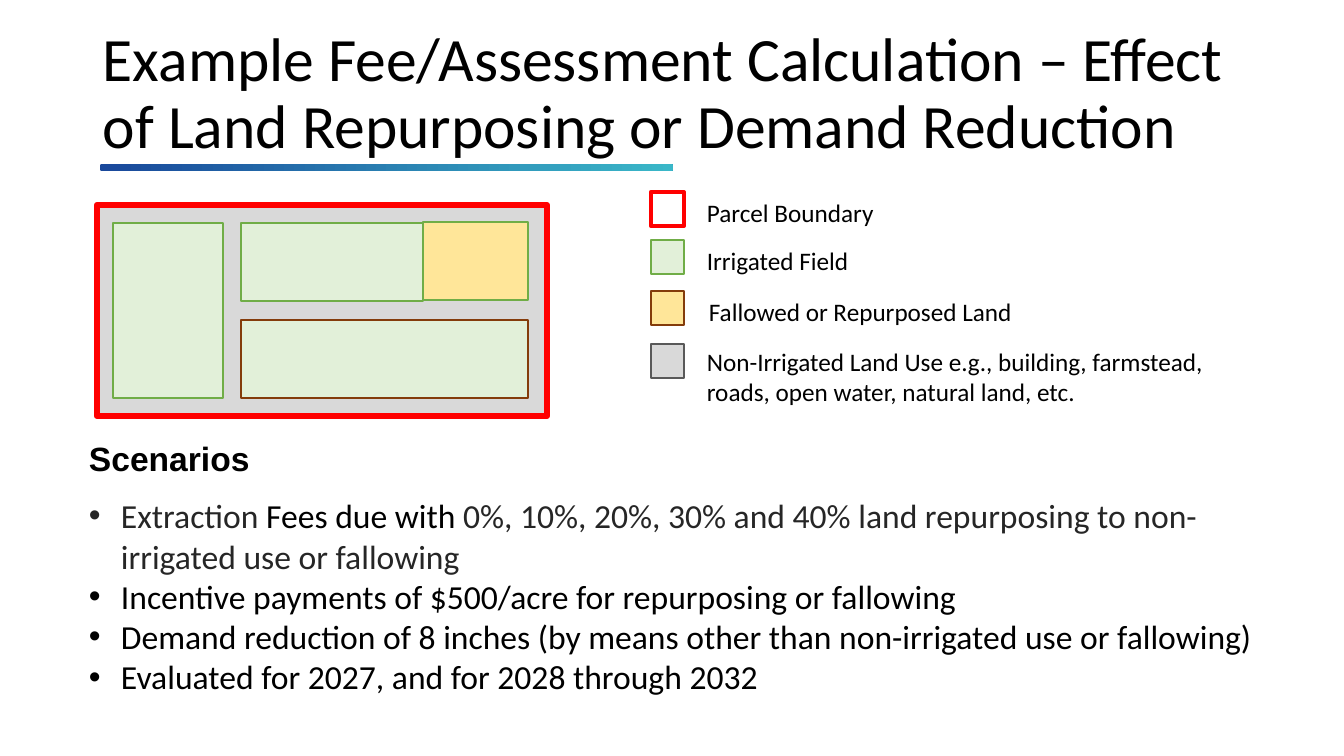
from lxml.etree import SubElement
from pptx import Presentation
from pptx.dml.color import RGBColor
from pptx.enum.shapes import MSO_SHAPE
from pptx.enum.text import MSO_ANCHOR, MSO_AUTO_SIZE
from pptx.oxml.ns import qn
from pptx.util import Emu, Pt

EMU_PER_PX = 914400 / 100.8
COLORS = {
    "black": "000000", "dark": "262626", "white": "FFFFFF", "red": "FF0000",
    "gray": "D9D9D9", "gray_edge": "595959", "field": "E2F0D9", "green": "70AD47",
    "fallow": "FFE699", "brown": "843C0B", "blue": "19489B", "teal": "3AB7C8",
}


def px(value):
    return Emu(round(value * EMU_PER_PX))


def rgb(name):
    return RGBColor.from_string(COLORS[name])


class SlideBuilder:
    def __init__(self, slide, font="Calibri"):
        self.slide = slide
        self.font = font

    def shape(self, kind, box):
        s = self.slide.shapes.add_shape(kind, *map(px, box))
        s.shadow.inherit = False
        return s

    def rect(self, box, fill, line, width=1):
        s = self.shape(MSO_SHAPE.RECTANGLE, box)
        s.fill.solid()
        s.fill.fore_color.rgb = rgb(fill)
        s.line.color.rgb = rgb(line)
        s.line.width = Pt(width)

    def gradient_bar(self, box, colors):
        s = self.shape(MSO_SHAPE.ROUNDED_RECTANGLE, box)
        s.adjustments[0] = 0.24
        s.line.fill.background()
        s.fill.gradient()
        s.fill.gradient_angle = 0
        for position, (stop, color) in enumerate(zip(s.fill.gradient_stops, colors)):
            stop.position = position
            stop.color.rgb = rgb(color)

    def frame(self, box, **settings):
        tf = self.slide.shapes.add_textbox(*map(px, box)).text_frame
        settings = {"word_wrap": True, "auto_size": MSO_AUTO_SIZE.NONE} | settings
        for name, value in settings.items():
            setattr(tf, name, value)
        return tf

    def run(self, p, text, size, color="black", **style):
        r = p.add_run()
        r.text = text
        r.font.color.rgb = rgb(color)
        for name, value in ({"name": self.font, "size": Pt(size)} | style).items():
            setattr(r.font, name, value)

    def bullet(self, tf, runs, size, indent=32):
        p = tf.add_paragraph()
        pPr = p._p.get_or_add_pPr()
        pPr.set("marL", str(px(indent)))
        pPr.set("indent", str(-px(indent)))
        SubElement(pPr, qn("a:buFont"), typeface="Arial")
        SubElement(pPr, qn("a:buChar"), char="•")
        for text, color in runs:
            self.run(p, text, size, color)

    def legend_row(self, top, label, fill, line, width=1, label_left=697, label_top=None):
        self.rect((651, top, 33, 34), fill, line, width)
        tf = self.frame((label_left, label_top or top, 529, 40))
        self.run(tf.paragraphs[0], label, 18)


FIELDS = [
    ((113, 223, 110, 175), "field", "green"),
    ((241, 223, 182, 78), "field", "green"),
    ((241, 320, 287, 78), "field", "brown"),
    ((423, 222, 105, 78), "fallow", "green"),
]
LEGEND = [
    dict(top=192, label="Parcel Boundary", fill="white", line="red", width=3),
    dict(top=240, label="Irrigated Field", fill="field", line="green"),
    dict(top=291, label="Fallowed or Repurposed Land", fill="fallow", line="brown",
         label_left=699),
    dict(top=344, label="Non-Irrigated Land Use e.g., building, farmstead, "
         "roads, open water, natural land, etc.", fill="gray", line="gray_edge",
         label_top=341),
]
SCENARIOS = [
    [("Extraction ", "dark"), ("Fees due with ", "black"),
     ("0%, 10%, 20%, 30% and 40% land repurposing to non-irrigated use or fallowing",
      "dark")],
    [("Incentive payments of $500/acre for repurposing or fallowing", "black")],
    [("Demand reduction of 8 inches (by means other than non-irrigated use or fallowing)",
      "black")],
    [("Evaluated for 2027, and for 2028 through 2032", "black")],
]


def main():
    prs = Presentation()
    prs.slide_width, prs.slide_height = px(1344), px(756)
    page = SlideBuilder(prs.slides.add_slide(prs.slide_layouts[6]))

    page.rect((97, 205, 450, 211), "gray", "red", 4.5)

    title = page.frame((93, 22, 1159, 146), vertical_anchor=MSO_ANCHOR.MIDDLE)
    p = title.paragraphs[0]
    p.line_spacing = 0.9
    page.run(p, "Example Fee/Assessment Calculation – Effect of Land Repurposing "
             "or Demand Reduction", 44)

    body = page.frame((79, 433, 1187, 271))
    p = body.paragraphs[0]
    p.space_after = Pt(12)
    page.run(p, "Scenarios", 24, name="Arial", bold=True)
    for runs in SCENARIOS:
        page.bullet(body, runs, 24)

    for field in FIELDS:
        page.rect(*field)
    for row in LEGEND:
        page.legend_row(**row)
    page.gradient_bar((100, 164, 573, 7), ("blue", "teal"))

    prs.save("out.pptx")


if __name__ == "__main__":
    main()
